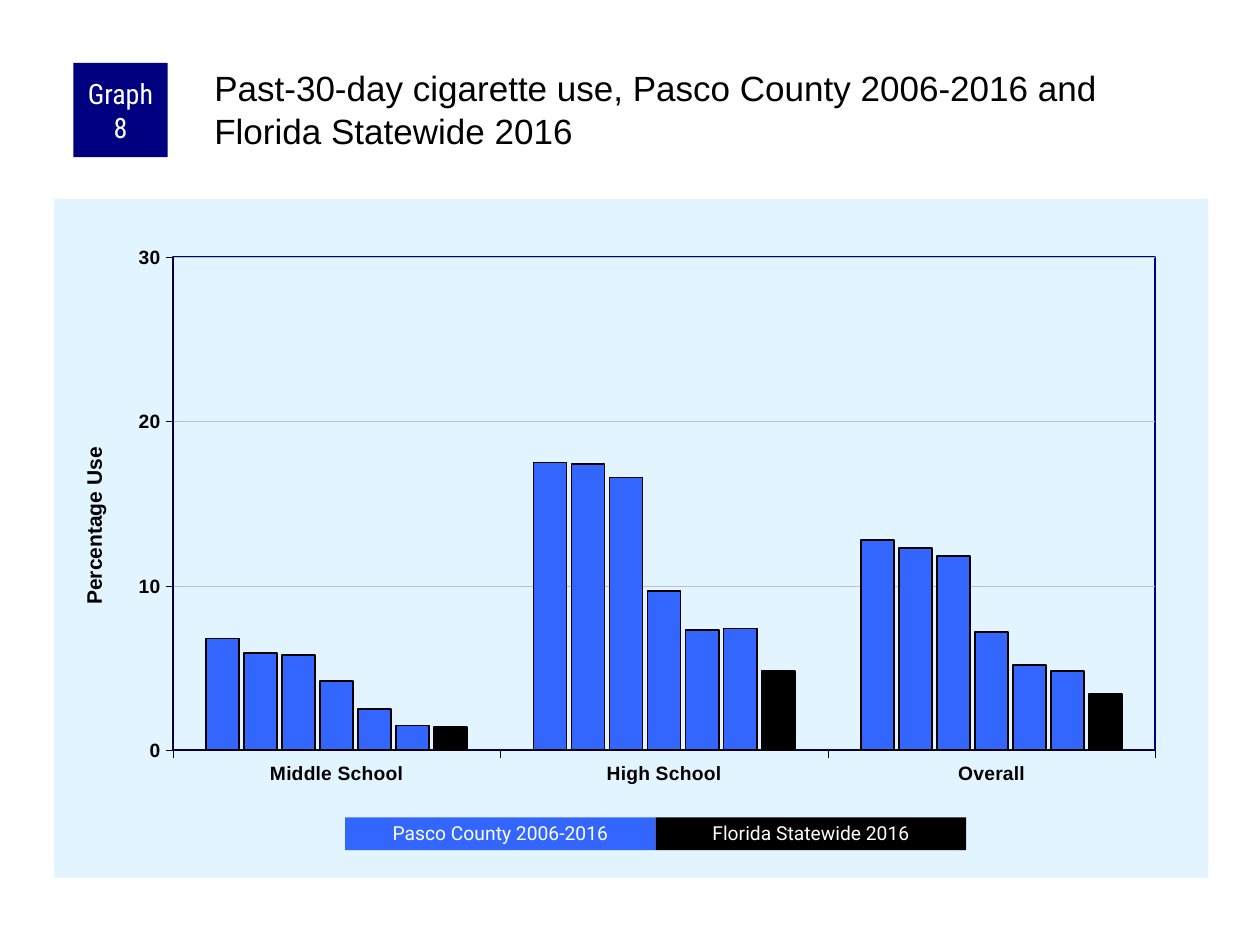
from lxml import etree
from pptx import Presentation, util as u
from pptx.chart.data import CategoryChartData
from pptx.dml.color import RGBColor
from pptx.enum import chart as ch, shapes, text
from pptx.oxml import parse_xml
from pptx.oxml.ns import nsdecls, qn

THEME = {
    "navy": "000080", "blue": "3366FF", "black": "000000", "white": "FFFFFF",
    "panel": "E1F4FF", "grid": "C0C0C0",
    "body": "Arial", "badge": "Roboto Condensed", "key": "Roboto",
    "title_size": 20, "badge_size": 16, "axis_title_size": 12,
    "label_size": 11, "chart_size": 8,
}
TITLE = "Past-30-day cigarette use, Pasco County 2006-2016 and Florida Statewide 2016"
BADGE = "Graph 8"
AXIS_TITLE = "Percentage Use"
USE_BY_SCHOOL = {
    "Middle School": (6.8, 5.9, 5.8, 4.2, 2.5, 1.5, 1.4),
    "High School": (17.5, 17.4, 16.6, 9.7, 7.3, 7.4, 4.8),
    "Overall": (12.8, 12.3, 11.8, 7.2, 5.2, 4.8, 3.4),
}
KEYS = [("Pasco County 2006-2016", "blue"), ("Florida Statewide 2016", "black")]
KEY_LEFT, KEY_TOP, KEY_WIDTH, KEY_HEIGHT = 6.96, 16.48, 6.26, 0.66


def color(name):
    return RGBColor.from_string(THEME[name])


def style_font(font, face, size, shade, bold=False):
    font.name = THEME[face]
    font.size = u.Pt(THEME[size])
    font.color.rgb = color(shade)
    font.bold = bold


def style_line(line, shade, width):
    line.color.rgb = color(shade)
    line.width = u.Pt(width)


def write(box, words, face, size, shade, align, anchor, insets):
    frame = box.text_frame
    frame.word_wrap = True
    frame.auto_size = text.MSO_AUTO_SIZE.NONE
    frame.vertical_anchor = anchor
    frame.margin_left, frame.margin_top, frame.margin_right, frame.margin_bottom = map(u.Cm, insets)
    para = frame.paragraphs[0]
    para.alignment = align
    span = para.add_run()
    span.text = words
    style_font(span.font, face, size, shade)
    return para


def add_block(page, place, fill, words, face, size, insets):
    box = page.shapes.add_shape(shapes.MSO_SHAPE.RECTANGLE, *map(u.Cm, place))
    box.shadow.inherit = False
    box.fill.solid()
    box.fill.fore_color.rgb = color(fill)
    box.line.fill.background()
    return write(box, words, face, size, "white", text.PP_ALIGN.CENTER,
                 text.MSO_ANCHOR.MIDDLE, insets)


def set_layout(parent, index, **settings):
    for old in parent.findall(qn("c:layout")):
        parent.remove(old)
    layout = parse_xml(f"<c:layout {nsdecls('c')}><c:manualLayout/></c:layout>")
    for tag, value in settings.items():
        etree.SubElement(layout[0], qn(f"c:{tag}")).set("val", str(value))
    parent.insert(index, layout)


def style_axis(axis):
    axis.major_tick_mark = ch.XL_TICK_MARK.OUTSIDE
    axis.minor_tick_mark = ch.XL_TICK_MARK.NONE
    style_font(axis.tick_labels.font, "body", "label_size", "black", True)
    style_line(axis.format.line, "black", 0.25)


def add_use_chart(page):
    data = CategoryChartData()
    data.categories = list(USE_BY_SCHOOL)
    for number, values in enumerate(zip(*USE_BY_SCHOOL.values()), 1):
        data.add_series(f"Series {number}", values)
    chart = page.shapes.add_chart(
        ch.XL_CHART_TYPE.COLUMN_CLUSTERED,
        *map(u.Cm, (1.09, 4.01, 23.27, 13.69)), data).chart
    chart.has_title = False
    chart.has_legend = False
    style_font(chart.font, "body", "chart_size", "black")

    plot = chart.plots[0]
    plot.vary_by_categories = False
    plot.gap_width, plot.overlap = 200, -15
    bars = list(plot.series)
    for series in bars:
        series.format.fill.solid()
        series.format.fill.fore_color.rgb = color("black" if series is bars[-1] else "blue")
        style_line(series.format.line, "black", 1)

    style_axis(chart.category_axis)
    scale = chart.value_axis
    style_axis(scale)
    scale.minimum_scale, scale.maximum_scale, scale.major_unit = 0, 30, 10
    scale.has_major_gridlines = True
    style_line(scale.major_gridlines.format.line, "grid", 0.25)
    span = scale.axis_title.text_frame.paragraphs[0].add_run()
    span.text = AXIS_TITLE
    style_font(span.font, "body", "axis_title_size", "black", True)

    space = chart.element
    area = space.find(".//" + qn("c:plotArea"))
    set_layout(area, 0, layoutTarget="inner", xMode="edge", yMode="edge",
               x=0.103, y=0.086, w=0.851, h=0.726)
    set_layout(area.find(".//" + qn("c:title")), 1, xMode="edge", yMode="edge", x=0.02, y=0.36)
    area.append(parse_xml(
        f"<c:spPr {nsdecls('c', 'a')}><a:noFill/><a:ln w='12700'><a:solidFill>"
        f"<a:srgbClr val='{THEME['navy']}'/></a:solidFill></a:ln></c:spPr>"))
    space.find(qn("c:chart")).addnext(parse_xml(
        f"<c:spPr {nsdecls('c', 'a')}><a:solidFill><a:srgbClr val='{THEME['panel']}'/>"
        f"</a:solidFill><a:ln><a:noFill/></a:ln></c:spPr>"))


def main():
    deck = Presentation()
    deck.slide_width, deck.slide_height = u.Cm(25.4), u.Cm(19.05)
    page = deck.slides.add_slide(deck.slide_layouts[5])

    title = page.shapes.title
    title.left, title.top, title.width, title.height = map(u.Cm, (4.24, 1.27, 20.12, 2.11))
    write(title, TITLE, "body", "title_size", "black", text.PP_ALIGN.LEFT,
          text.MSO_ANCHOR.TOP, (0.08, 0.08, 0, 0))

    add_use_chart(page)
    add_block(page, (1.48, 1.27, 1.9, 1.9), "navy", BADGE, "badge", "badge_size",
              (0.13, 0, 0.13, 0))
    for index, (words, fill) in enumerate(KEYS):
        place = (KEY_LEFT + index * KEY_WIDTH, KEY_TOP, KEY_WIDTH, KEY_HEIGHT)
        para = add_block(page, place, fill, words, "key", "label_size",
                         (0.25, 0.13, 0.25, 0.13))
        para.line_spacing = 0.9

    deck.save("out.pptx")


if __name__ == "__main__":
    main()
